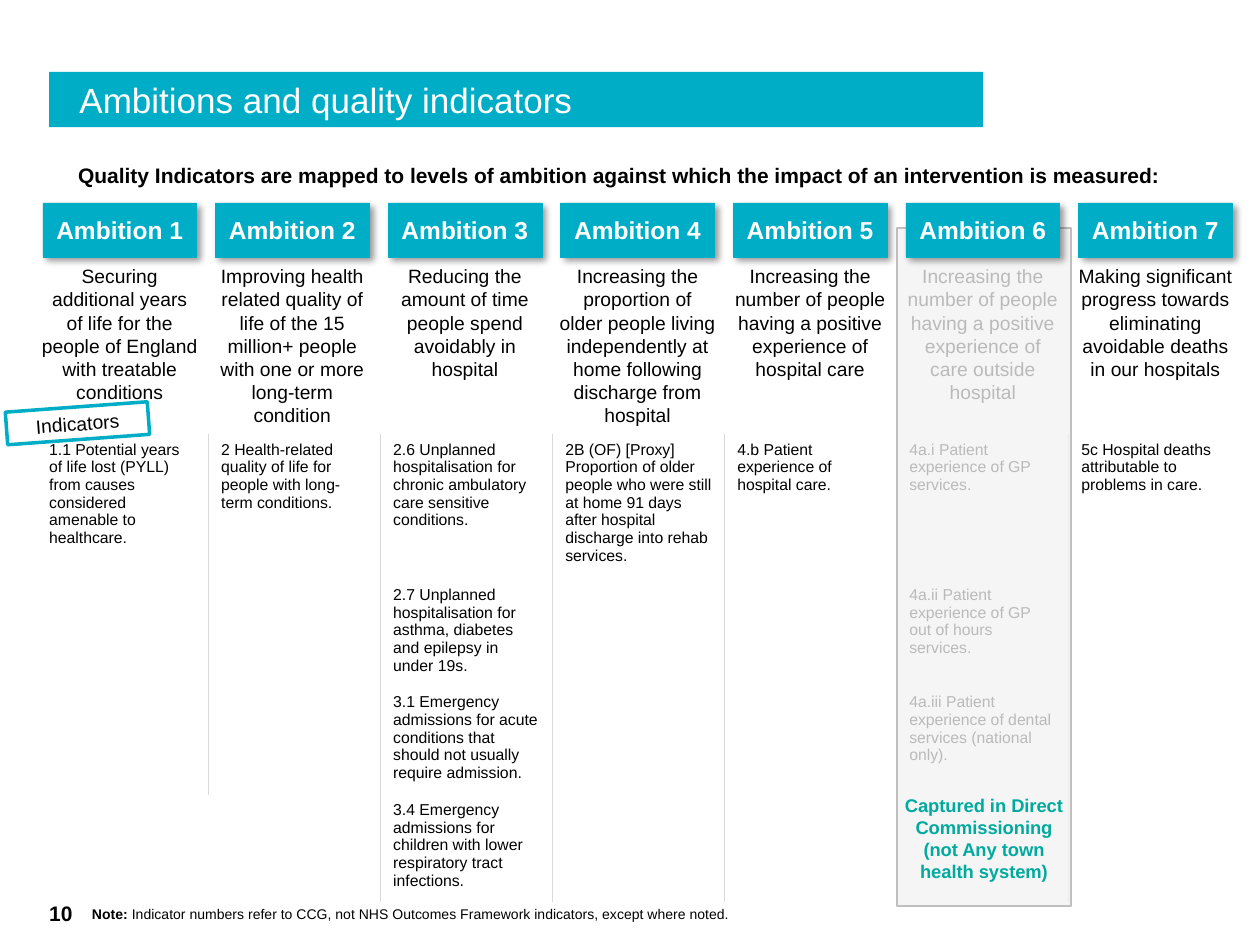
from lxml.etree import SubElement
from pptx import Presentation
from pptx.dml.color import RGBColor
from pptx.enum.shapes import MSO_SHAPE
from pptx.enum.text import MSO_ANCHOR, MSO_AUTO_SIZE, PP_ALIGN
from pptx.oxml.ns import qn
from pptx.util import Inches, Pt

COLOURS = {
    "teal": "00ADC6", "green": "00AA9E", "black": "000000", "white": "FFFFFF",
    "panel": "F2F2F2", "edge": "BFBFBF", "divider": "D9D9D9",
}

TITLE = "Ambitions and quality indicators"
LEAD = ("Quality Indicators are mapped to levels of ambition against which "
        "the impact of an intervention is measured:")
CAPTURED = "Captured in Direct Commissioning (not Any town health system)"
NOTE = ("Note: ", "Indicator numbers refer to CCG, not NHS Outcomes Framework "
        "indicators, except where noted.")
PAGE_NUMBER = "10"

# (description, line count, indicators)
AMBITIONS = [
    ("Securing additional years of life for the people of England with treatable conditions", 6,
     ["1.1 Potential years of life lost (PYLL) from causes considered amenable to healthcare."]),
    ("Improving health related quality of life of the 15 million+ people with one or more "
     "long-term condition", 7,
     ["2 Health-related quality of life for people with long-term conditions."]),
    ("Reducing the amount of time people spend avoidably in hospital", 5,
     ["2.6 Unplanned hospitalisation for chronic ambulatory care sensitive conditions.",
      "2.7 Unplanned hospitalisation for asthma, diabetes and epilepsy in under 19s.",
      "3.1 Emergency admissions for acute conditions that should not usually require admission.",
      "3.4 Emergency admissions for children with lower respiratory tract infections."]),
    ("Increasing the proportion of older people living independently at home following "
     "discharge from hospital", 7,
     ["2B (OF) [Proxy] Proportion of older people who were still at home 91 days after "
      "hospital discharge into rehab services."]),
    ("Increasing the number of people having a positive experience of hospital care", 5,
     ["4.b Patient experience of hospital care."]),
    ("Increasing the number of people having a positive experience of care outside hospital", 6,
     ["4a.i Patient experience of GP services.",
      "4a.ii Patient experience of GP out of hours services.",
      "4a.iii Patient experience of dental services (national only)."]),
    ("Making significant progress towards eliminating avoidable deaths in our hospitals", 5,
     ["5c Hospital deaths attributable to problems in care."]),
]
MUTED = 5
STEP = 1.37
ROW_HEIGHTS = [1.15, 0.85, 0.85, 0.85]
NO_STYLE = "{2D5ABB26-0587-4C30-8999-92F81FD0307C}"

FORMATS = {
    "title": {"size": Pt(20), "bold": False, "colour": "white"},
    "header": {"size": Pt(14), "bold": True, "colour": "white"},
    "description": {"size": Pt(11), "bold": False, "colour": "black"},
    "indicator": {"size": Pt(9), "bold": False, "colour": "black"},
    "note": {"size": Pt(8), "bold": False, "colour": "black"},
    "note_label": {"size": Pt(8), "bold": True, "colour": "black"},
    "captured": {"size": Pt(10.5), "bold": True, "colour": "green"},
    "strong": {"size": Pt(12), "bold": True, "colour": "black"},
}


def rgb(colour):
    """Return the named colour."""
    return RGBColor.from_string(COLOURS[colour])


def write(frame, runs, align=PP_ALIGN.LEFT, anchor=MSO_ANCHOR.TOP, insets=None):
    """Write (text, format name) runs as the single paragraph of a frame."""
    if insets:
        frame.word_wrap = True
        frame.vertical_anchor = anchor
        for side, inset in zip(("left", "top", "right", "bottom"), insets):
            setattr(frame, f"margin_{side}", Inches(inset))
    paragraph = frame.paragraphs[0]
    paragraph.alignment = align
    for text, name in runs:
        run = paragraph.add_run()
        run.text = text
        run.font.name = "Arial"
        run.font.color.rgb = rgb(FORMATS[name]["colour"])
        for attribute in ("size", "bold"):
            setattr(run.font, attribute, FORMATS[name][attribute])
    return paragraph


def add_text(slide, box, runs, grow=True, **layout):
    """Add a wrapping text box."""
    frame = slide.shapes.add_textbox(*map(Inches, box)).text_frame
    paragraph = write(frame, runs, **layout)
    frame.auto_size = MSO_AUTO_SIZE.SHAPE_TO_FIT_TEXT if grow else MSO_AUTO_SIZE.NONE
    return paragraph


def add_box(slide, box, fill, edge, weight):
    """Add a flat rectangle."""
    rectangle = slide.shapes.add_shape(MSO_SHAPE.RECTANGLE, *map(Inches, box))
    rectangle.shadow.inherit = False
    if fill:
        rectangle.fill.solid()
        rectangle.fill.fore_color.rgb = rgb(fill)
    else:
        rectangle.fill.background()
    rectangle.line.color.rgb = rgb(edge)
    rectangle.line.width = Pt(weight)
    return rectangle


def add_description(slide, column):
    """Add the wording of one ambition."""
    description, lines, _ = AMBITIONS[column]
    box = (0.24 + column * STEP, 2.06, 1.42, 0.09 + 0.184 * lines)
    add_text(slide, box, [(description, "description")], align=PP_ALIGN.CENTER,
             insets=(0.09, 0.04, 0.09, 0.04))


def add_header(slide, column):
    """Add the shadowed header of one ambition."""
    header = add_box(slide, (0.34 + column * STEP, 1.61, 1.22, 0.43), "teal", "teal", 0.25)
    effects = header._element.spPr.find(qn("a:effectLst"))
    shadow = SubElement(effects, qn("a:outerShdw"), blurRad=str(Pt(4)), dist=str(Pt(3)),
                        dir="2700000", algn="tl", rotWithShape="0")
    shade = SubElement(shadow, qn("a:srgbClr"), val=COLOURS["black"])
    SubElement(shade, qn("a:alpha"), val="40000")
    write(header.text_frame, [(f"Ambition {column + 1}", "header")], PP_ALIGN.CENTER,
          MSO_ANCHOR.MIDDLE, (0.07, 0.04, 0.07, 0.04))


def add_border(cell, side, colour, weight):
    """Draw one side of a cell, or clear it when there is no colour."""
    line = SubElement(cell._tc.get_or_add_tcPr(), qn(f"a:ln{side}"), w=str(Pt(weight)))
    if colour:
        fill = SubElement(line, qn("a:solidFill"))
        SubElement(fill, qn("a:srgbClr"), val=COLOURS[colour])
    else:
        SubElement(line, qn("a:noFill"))


def divider(row, edge):
    """Return the colour and weight of a vertical edge of the grid."""
    if edge in (0, len(AMBITIONS)):
        return "white", 1
    if edge == 1 and row == len(ROW_HEIGHTS) - 1:
        return None, 0.5
    return "divider", 0.5


def add_indicators(slide):
    """Add the table of indicators under the ambitions."""
    place = map(Inches, (0.29, 3.45, 9.56, sum(ROW_HEIGHTS)))
    table = slide.shapes.add_table(len(ROW_HEIGHTS), len(AMBITIONS), *place).table
    table.first_row = table.horz_banding = False
    table._tbl.tblPr.find(qn("a:tableStyleId")).text = NO_STYLE
    for row, height in enumerate(ROW_HEIGHTS):
        table.rows[row].height = Inches(height)
        for column, (_, _, indicators) in enumerate(AMBITIONS):
            cell = table.cell(row, column)
            add_border(cell, "L", *divider(row, column))
            add_border(cell, "R", *divider(row, column + 1))
            if row == 0:
                add_border(cell, "T", "white", 1)
            cell.fill.background()
            if row < len(indicators):
                write(cell.text_frame, [(indicators[row], "indicator")])


def main():
    """Build the slide of ambitions and quality indicators."""
    deck = Presentation()
    deck.slide_width, deck.slide_height = Inches(10), Inches(7.5)
    slide = deck.slides.add_slide(deck.slide_layouts[5])

    title = slide.shapes.title
    place = dict(zip(("left", "top", "width", "height"), (0.39, 0.57, 7.41, 0.44)))
    for attribute, length in place.items():
        setattr(title, attribute, Inches(length))
    title.fill.solid()
    title.fill.fore_color.rgb = rgb("teal")
    write(title.text_frame, [(TITLE, "title")], anchor=MSO_ANCHOR.MIDDLE, insets=(0.24, 0, 0, 0))

    add_description(slide, MUTED)
    add_indicators(slide)
    veil = add_box(slide, (7.12, 1.81, 1.38, 5.38), "panel", "edge", 0.75)
    SubElement(veil._element.spPr.find(f".//{qn('a:srgbClr')}"), qn("a:alpha"), val="77000")
    for column in range(len(AMBITIONS)):
        add_header(slide, column)
        if column != MUTED:
            add_description(slide, column)

    tag = add_box(slide, (0.05, 3.23, 1.13, 0.26), None, "teal", 2)
    tag.rotation = 355.8
    write(tag.text_frame, [("Indicators", "description")], PP_ALIGN.CENTER,
          MSO_ANCHOR.MIDDLE, (0.09, 0.04, 0.09, 0.04))

    note = add_text(slide, (0.73, 7.19, 6.88, 0.13),
                    zip(NOTE, ("note_label", "note")), insets=(0, 0, 0, 0))
    note.space_after = Pt(2.6)
    add_text(slide, (7.12, 6.26, 1.38, 0.8), [(CAPTURED, "captured")],
             align=PP_ALIGN.CENTER, insets=(0.04, 0.04, 0.04, 0.04))
    add_text(slide, (0.51, 1.23, 8.98, 0.32), [(LEAD, "strong")], insets=(0.11, 0.06, 0.11, 0.06))
    add_text(slide, (0.39, 7.15, 0.33, 0.2), [(PAGE_NUMBER, "strong")], grow=False,
             anchor=MSO_ANCHOR.BOTTOM, insets=(0, 0, 0, 0))
    deck.save("out.pptx")


if __name__ == "__main__":
    main()
